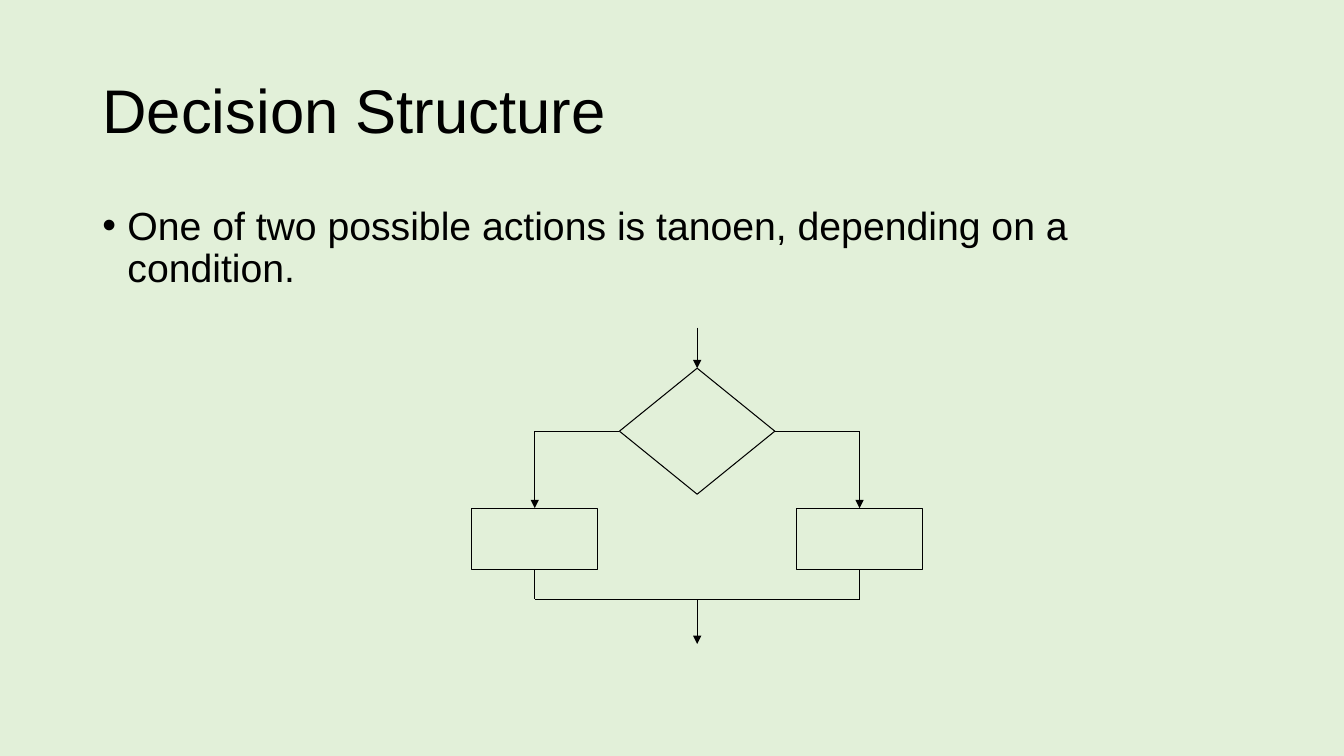
from dataclasses import dataclass

from lxml.etree import SubElement
from pptx import Presentation
from pptx.dml.color import RGBColor
from pptx.enum.dml import MSO_LINE
from pptx.enum.shapes import MSO_CONNECTOR as Connector, MSO_SHAPE as Shape
from pptx.enum.text import MSO_ANCHOR as Anchor, MSO_AUTO_SIZE as AutoSize, PP_ALIGN as Align
from pptx.oxml.ns import qn
from pptx.util import Pt

TOP, LEFT, BOTTOM, RIGHT = range(4)


@dataclass(frozen=True)
class Theme:
    font: str = "Arial"
    ink: RGBColor = RGBColor(0x00, 0x00, 0x00)
    background: RGBColor = RGBColor(0xE2, 0xF0, 0xD9)
    title_size: int = 44
    body_size: int = 28
    line_width: float = 0.75


@dataclass(frozen=True)
class Box:
    left: float
    top: float
    width: float
    height: float

    def lengths(self):
        return [Pt(v) for v in (self.left, self.top, self.width, self.height)]


THEME = Theme()


def write(frame, text, size):
    """Put one left-aligned run in the frame and return its paragraph."""
    frame.word_wrap = True
    frame.auto_size = AutoSize.NONE
    para = frame.paragraphs[0]
    para.alignment = Align.LEFT
    para.line_spacing = 0.9
    span = para.add_run()
    span.text = text
    span.font.name = THEME.font
    span.font.size = Pt(size)
    span.font.color.rgb = THEME.ink
    return para


def place_title(slide, box, text):
    title = slide.shapes.title
    title.left, title.top, title.width, title.height = box.lengths()
    title.text_frame.vertical_anchor = Anchor.MIDDLE
    write(title.text_frame, text, THEME.title_size)


def place_bullet(slide, box, text):
    frame = slide.shapes.add_textbox(*box.lengths()).text_frame
    para = write(frame, text, THEME.body_size)
    para.space_before = Pt(10)
    props = para._p.get_or_add_pPr()
    props.set("marL", str(Pt(18)))
    props.set("indent", str(Pt(-18)))
    SubElement(props, qn("a:buFont"), typeface=THEME.font)
    SubElement(props, qn("a:buChar"), char="•")


def outline(item):
    item.line.color.rgb = THEME.ink
    item.line.width = Pt(THEME.line_width)
    item.line.dash_style = MSO_LINE.SOLID


def add_node(slide, kind, center, top, width, height):
    box = Box(center - width / 2, top, width, height)
    node = slide.shapes.add_shape(kind, *box.lengths())
    node.shadow.inherit = False
    node.fill.background()
    outline(node)
    return node


def add_line(slide, start, end, arrow=False):
    line = slide.shapes.add_connector(
        Connector.STRAIGHT, *[Pt(v) for v in (*start, *end)])
    outline(line)
    if arrow:
        SubElement(line.line._get_or_add_ln(), qn("a:tailEnd"), type="triangle")
    SubElement(line._element.spPr, qn("a:effectLst"))
    return line


def place_decision_flow(slide, box):
    """Draw a decision whose two branches lead to actions and merge again."""
    action_width, action_height = 90, 44
    decision_width, decision_height = 111, 90
    middle = box.left + box.width / 2
    decision_top = box.top + 29
    branch_y = decision_top + decision_height / 2
    action_top = box.top + 129
    action_bottom = action_top + action_height
    merge_y = box.top + 194

    decision = add_node(slide, Shape.FLOWCHART_DECISION, middle, decision_top,
                        decision_width, decision_height)
    entry = add_line(slide, (middle, box.top), (middle, decision_top), arrow=True)
    entry.end_connect(decision, TOP)

    reach = (box.width - action_width) / 2
    for direction, side in ((-1, LEFT), (1, RIGHT)):
        center = middle + direction * reach
        corner = (middle + direction * decision_width / 2, branch_y)
        action = add_node(slide, Shape.RECTANGLE, center, action_top,
                          action_width, action_height)
        branch = add_line(slide, corner, (center, branch_y))
        branch.begin_connect(decision, side)
        descent = add_line(slide, (center, branch_y), (center, action_top), arrow=True)
        descent.end_connect(action, TOP)
        leaving = add_line(slide, (center, action_bottom), (center, merge_y))
        leaving.begin_connect(action, BOTTOM)

    add_line(slide, (middle + reach, merge_y), (middle - reach, merge_y))
    add_line(slide, (middle, merge_y), (middle, box.top + box.height), arrow=True)


def build_decision_slide(deck):
    slide = deck.slides.add_slide(deck.slide_layouts.get_by_name("Title Only"))
    fill = slide.background.fill
    fill.solid()
    fill.fore_color.rgb = THEME.background
    place_title(slide, Box(66, 29, 828, 104), "Decision Structure")
    place_bullet(slide, Box(66, 144, 828, 343),
                 "One of two possible actions is tanoen, depending on a condition.")
    place_decision_flow(slide, Box(337, 234, 322, 226))


def main():
    deck = Presentation()
    deck.slide_width, deck.slide_height = Pt(960), Pt(540)
    build_decision_slide(deck)
    deck.save("out.pptx")


if __name__ == "__main__":
    main()
